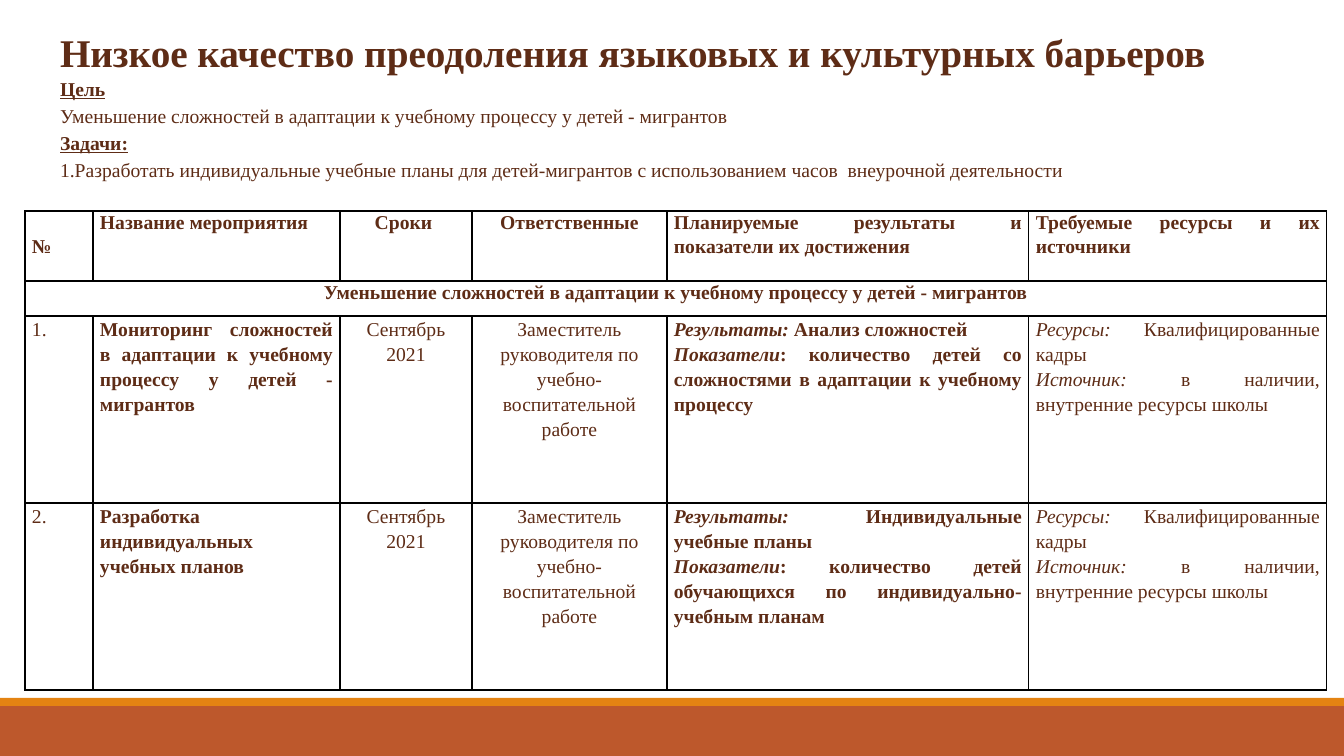
from pptx import Presentation
from pptx import util as u
from pptx.dml.color import RGBColor
from pptx.enum import shapes, text
from pptx.oxml import parse_xml
from pptx.oxml.ns import nsdecls

SCALE = 914400 / 100.8
PAGE = (1344, 756)
COLORS = {"text": "5E2C16", "line": "000000", "band": "BD582C", "stripe": "E48312"}
STYLES = {"b": "bold", "i": "italic", "u": "underline"}
LEFT, CENTER, JUSTIFY = (text.PP_ALIGN.LEFT, text.PP_ALIGN.CENTER, text.PP_ALIGN.JUSTIFY)

HEADING = "Низкое качество преодоления языковых и культурных барьеров"
GOAL = "Уменьшение сложностей в адаптации к учебному процессу у детей - мигрантов"
INTRO = [
    [("Цель", "bu")],
    [(GOAL, "")],
    [("Задачи:", "bu")],
    [("1.Разработать индивидуальные учебные планы для детей-мигрантов "
      "с использованием часов  внеурочной деятельности", "")],
]
COLUMNS = [
    ("№", 68, JUSTIFY),
    ("Название мероприятия", 247, JUSTIFY),
    ("Сроки ", 132, CENTER),
    ("Ответственные", 195, CENTER),
    ("Планируемые результаты и показатели их достижения", 362, JUSTIFY),
    ("Требуемые ресурсы и их источники", 298, JUSTIFY),
]
ROWS = [70, 35, 187, 187]
ACTIVITIES = [
    ("Мониторинг сложностей в адаптации к учебному процессу у детей - мигрантов",
     "Анализ сложностей",
     "количество детей со сложностями в адаптации к учебному процессу"),
    ("Разработка индивидуальных учебных планов",
     "Индивидуальные учебные планы",
     "количество детей обучающихся по индивидуально-учебным планам"),
]


def px(length):
    """Turn px into EMU."""
    return u.Emu(round(length * SCALE))


def assign(target, values):
    """Set attributes from a dict of format values."""
    for name, value in values.items():
        setattr(target, name, value)


def place(item, box):
    """Move an object to a px box."""
    assign(item, dict(zip(("left", "top", "width", "height"), map(px, box))))


def write(frame, lines, size=14, align=LEFT, spacing=1.07, after=0):
    """Fill a text frame with paragraphs of styled spans."""
    frame.word_wrap = True
    for index, line in enumerate(lines):
        para = frame.add_paragraph() if index else frame.paragraphs[0]
        assign(para, {"alignment": align, "line_spacing": spacing,
                      "space_before": u.Pt(0), "space_after": u.Pt(after)})
        for words, style in line:
            span = para.add_run()
            span.text = words
            assign(span.font, {"name": "Times New Roman", "size": u.Pt(size)})
            assign(span.font, {name: key in style for key, name in STYLES.items()})
            span.font.color.rgb = RGBColor.from_string(COLORS["text"])


def add_footer(page, box):
    """Draw the footer band with the stripe along its top."""
    left, top, width, height = box
    stripe = 8
    for color, part in (("band", (left, top + stripe, width, height - stripe)),
                        ("stripe", (left, top, width, stripe))):
        shape = page.shapes.add_shape(shapes.MSO_SHAPE.RECTANGLE, *map(px, part))
        shape.shadow.inherit = False
        shape.fill.solid()
        shape.fill.fore_color.rgb = RGBColor.from_string(COLORS[color])
        shape.line.fill.background()


def add_intro(page, box):
    """Place the heading and the goals below it."""
    left, top, width, height = box
    heading = 50
    title, body = page.placeholders
    place(title, (left, top, width, heading))
    place(body, (left, top + heading, width, height - heading))
    for holder in (title, body):
        assign(holder.text_frame, {
            "margin_left": 0, "margin_right": 0, "margin_top": 0, "margin_bottom": 0,
            "vertical_anchor": text.MSO_ANCHOR.TOP, "auto_size": text.MSO_AUTO_SIZE.NONE})
    write(title.text_frame, [[(HEADING, "b")]], size=28)
    write(body.text_frame, INTRO, after=1.4)
    for para in body.text_frame.paragraphs:
        properties = para._p.get_or_add_pPr()
        properties.set("marL", "0")
        properties.set("indent", "0")
        properties.append(parse_xml(f"<a:buNone {nsdecls('a')}/>"))


def outline(cell):
    """Draw the four borders of a cell."""
    for side in "LRTB":
        cell._tc.get_or_add_tcPr().append(parse_xml(
            f"<a:ln{side} {nsdecls('a')} w=\"12700\"><a:solidFill>"
            f"<a:srgbClr val=\"{COLORS['line']}\"/></a:solidFill></a:ln{side}>"))


def activity_cells(number, name, result, indicator):
    """Return the paragraphs of each cell in an activity row."""
    return [
        [[(f"{number}.", "")]],
        [[(name, "b")]],
        [[("Сентябрь", "")], [("2021", "")]],
        [[("Заместитель руководителя по учебно-воспитательной работе", "")]],
        [[("Результаты:", "bi"), (f" {result}", "b")],
         [("Показатели", "bi"), (f": {indicator}", "b")]],
        [[("Ресурсы:", "i"), (" Квалифицированные кадры", "")],
         [("Источник:", "i"), (" в наличии, внутренние ресурсы школы", "")]],
    ]


def add_plan(page, box):
    """Build the table of planned activities."""
    table = page.shapes.add_table(len(ROWS), len(COLUMNS), *map(px, box)).table
    assign(table, {"first_row": False, "horz_banding": False})
    for column, (_, width, _) in zip(table.columns, COLUMNS):
        column.width = px(width)
    for row, height in zip(table.rows, ROWS):
        row.height = px(height)
    for cell in table.iter_cells():
        assign(cell, {"margin_left": px(7), "margin_right": px(7),
                      "margin_top": 0, "margin_bottom": 0})
        outline(cell)
        cell.fill.background()
    table.cell(1, 0).merge(table.cell(1, len(COLUMNS) - 1))
    write(table.cell(1, 0).text_frame, [[(GOAL, "b")]], align=CENTER)
    table.cell(0, 0).vertical_anchor = text.MSO_ANCHOR.MIDDLE
    for index, (label, _, align) in enumerate(COLUMNS):
        write(table.cell(0, index).text_frame, [[(label, "b")]], align=align)
    for number, activity in enumerate(ACTIVITIES, 1):
        for index, lines in enumerate(activity_cells(number, *activity)):
            write(table.cell(number + 1, index).text_frame, lines,
                  align=COLUMNS[index][2], spacing=1.15)


def main():
    """Build and save the deck."""
    deck = Presentation()
    deck.slide_width, deck.slide_height = map(px, PAGE)
    page = deck.slides.add_slide(deck.slide_layouts[1])
    add_footer(page, (0, 698, 1344, 58))
    add_intro(page, (60, 25, 1210, 154))
    add_plan(page, (25, 211, sum(width for _, width, _ in COLUMNS), sum(ROWS)))
    deck.save("out.pptx")


if __name__ == "__main__":
    main()
